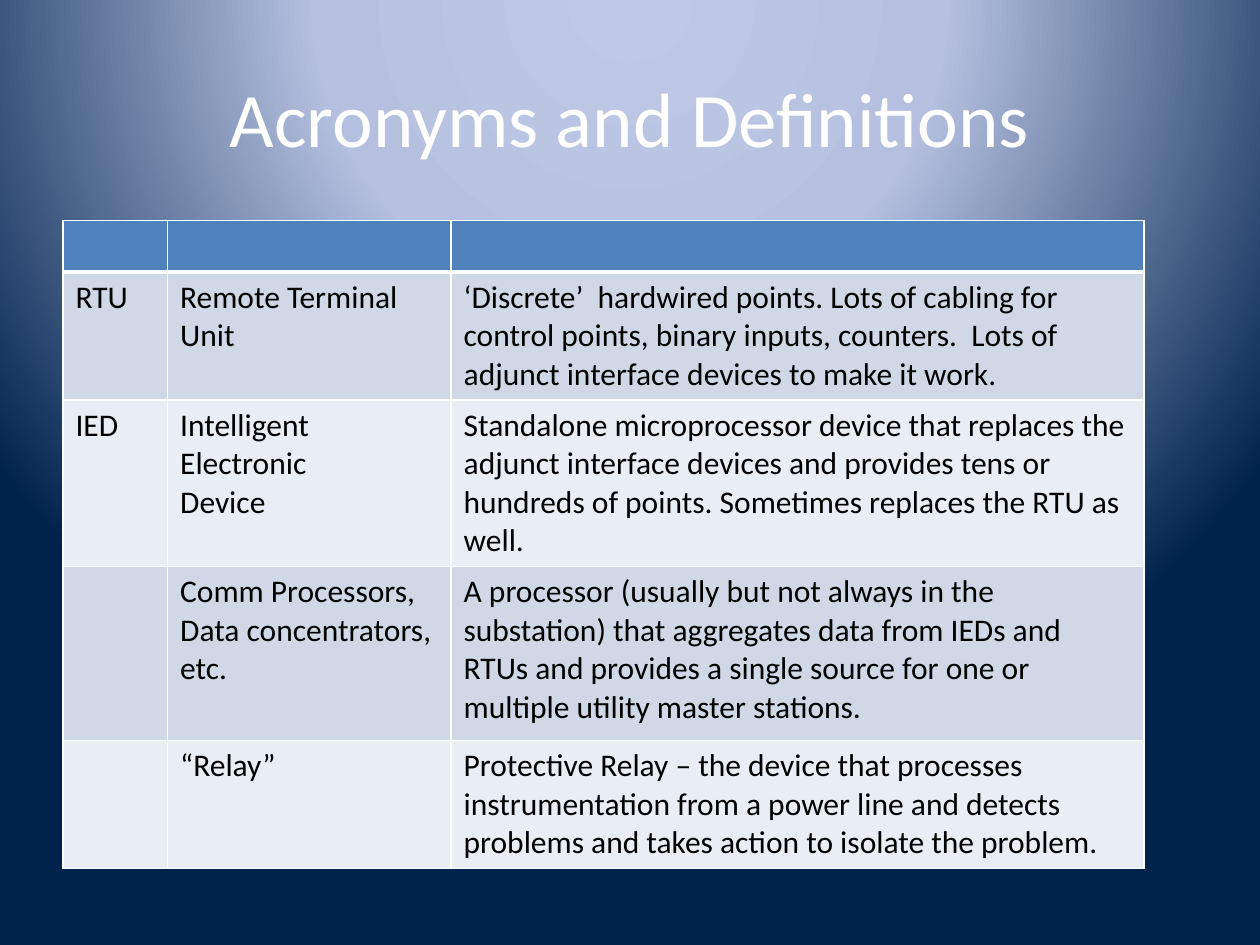
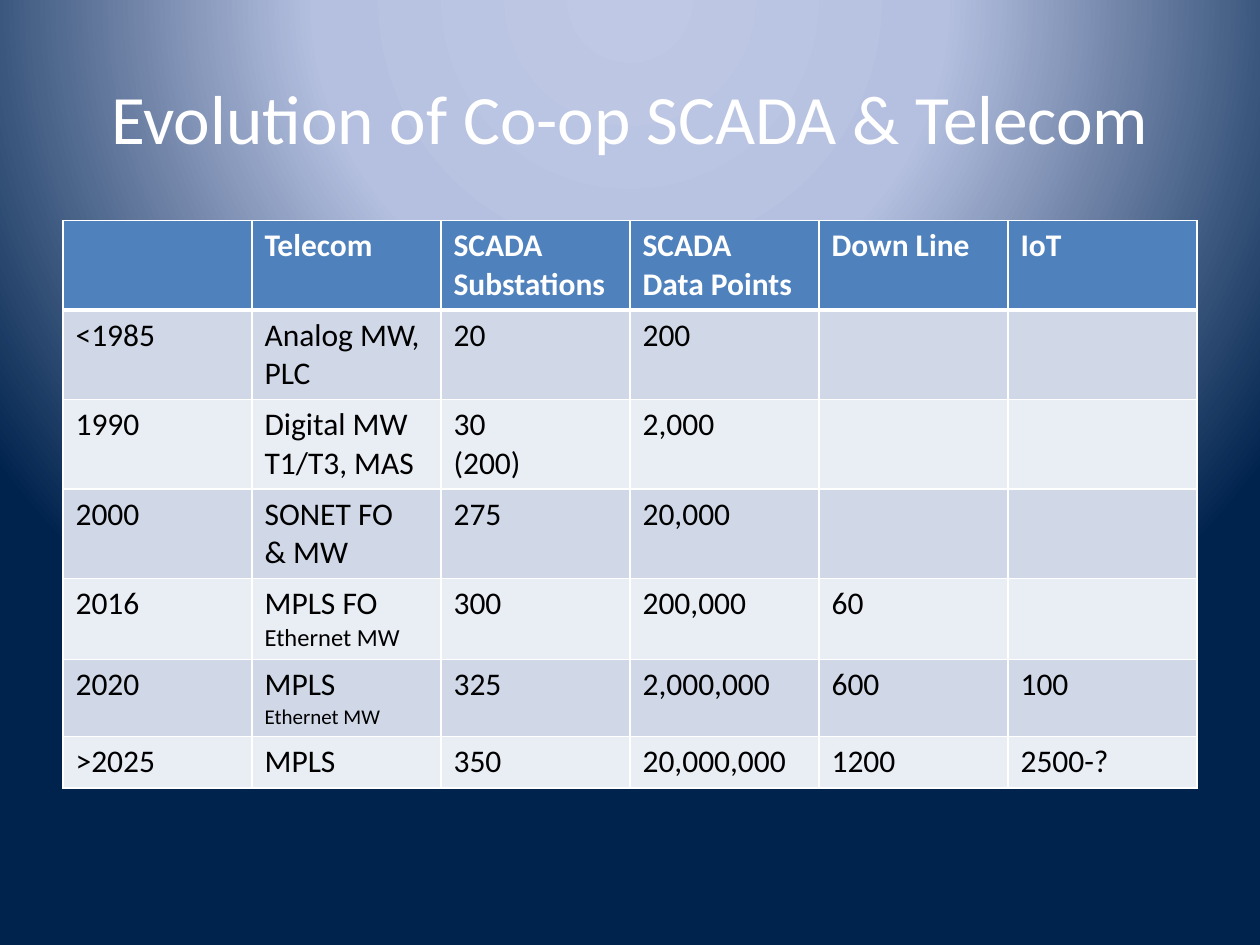
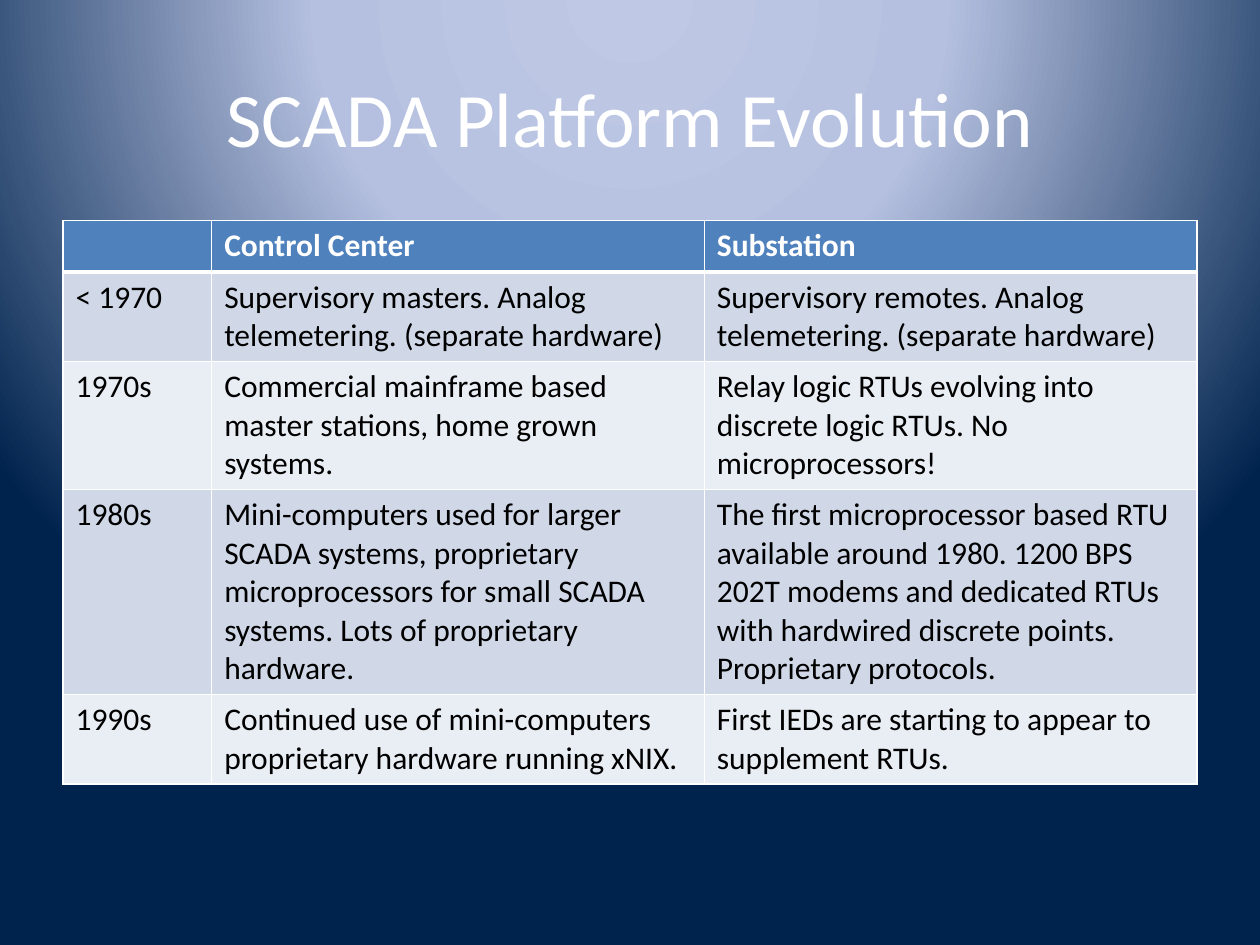
from dataclasses import dataclass

from pptx import Presentation
from pptx.dml.color import RGBColor
from pptx.enum.text import MSO_ANCHOR, PP_ALIGN
from pptx.oxml import parse_xml
from pptx.oxml.ns import nsdecls
from pptx.util import Inches, Pt

CENTER = PP_ALIGN.CENTER
MIDDLE = MSO_ANCHOR.MIDDLE
FONT = "Calibri"
WHITE = "FFFFFF"
BLACK = "000000"
HEADER_FILL = "4F81BD"
BAND_FILLS = ("E9EDF4", "D0D8E8")
BACKDROP_STOPS = ((0, "BFC9E5"), (40, "B5C0E0"), (100, "00234D"))
LEFT = 0.5
TABLE_TOP = 1.75
ROW_HEIGHT = 0.41
BODY_SIZE = 18
THIN, THICK = 1, 3


@dataclass(frozen=True)
class Line:
    text: str
    size: float = BODY_SIZE


Cell = str | tuple[Line, ...]


@dataclass(frozen=True)
class TableSlide:
    title: str
    col_widths: tuple[float, ...]
    rows: tuple[tuple[Cell, ...], ...]
    title_size: float = 44
    tall_rows: tuple[tuple[int, float], ...] = ()


SLIDES = (
    TableSlide(
        "Acronyms and Definitions",
        (0.83, 2.25, 5.5),
        (
            ("", "", ""),
            ("RTU", "Remote Terminal\nUnit",
             "‘Discrete’  hardwired points. Lots of cabling for control points, "
             "binary inputs, counters.  Lots of adjunct interface devices to make it work."),
            ("IED", "Intelligent Electronic\nDevice",
             "Standalone microprocessor device that replaces the adjunct interface devices "
             "and provides tens or hundreds of points. Sometimes replaces the RTU as well."),
            ("", "Comm Processors, Data concentrators, etc.",
             "A processor (usually but not always in the substation) that aggregates data "
             "from IEDs and RTUs and provides a single source for one or multiple utility "
             "master stations."),
            ("", "“Relay”",
             "Protective Relay – the device that processes instrumentation from a power line "
             "and detects problems and takes action to isolate the problem."),
        ),
        tall_rows=((3, 1.38),),
    ),
    TableSlide(
        "Evolution of Co-op SCADA & Telecom",
        (1.5,) * 6,
        (
            ("", "Telecom", "SCADA\nSubstations", "SCADA\nData Points", "Down Line", "IoT"),
            ("<1985", "Analog MW,\nPLC", "20", "200", "", ""),
            ("1990", "Digital MW\nT1/T3, MAS", "30\n(200)", "2,000", "", ""),
            ("2000", "SONET FO\n& MW", "275", "20,000", "", ""),
            ("2016", (Line("MPLS FO"), Line("Ethernet MW", 14)), "300", "200,000", "60", ""),
            ("2020", (Line("MPLS"), Line("Ethernet MW", 12)), "325", "2,000,000", "600", "100"),
            (">2025", "MPLS", "350", "20,000,000", "1200", "2500-?"),
        ),
        title_size=39.6,
    ),
    TableSlide(
        "SCADA Platform Evolution",
        (1.18, 3.91, 3.91),
        (
            ("", "Control Center", "Substation"),
            ("< 1970",
             "Supervisory masters. Analog telemetering. (separate hardware)",
             "Supervisory remotes. Analog telemetering. (separate hardware)"),
            ("1970s",
             "Commercial mainframe based master stations, home grown systems.",
             "Relay logic RTUs evolving into discrete logic RTUs. No microprocessors!"),
            ("1980s",
             "Mini-computers used for larger SCADA systems, proprietary microprocessors for "
             "small SCADA systems. Lots of proprietary hardware.",
             "The first microprocessor based RTU available around 1980. 1200 BPS 202T modems "
             "and dedicated RTUs with hardwired discrete points. Proprietary protocols."),
            ("1990s",
             "Continued use of mini-computers proprietary hardware running xNIX.",
             "First IEDs are starting to appear to supplement RTUs."),
        ),
    ),
)


def rgb(color: str) -> RGBColor:
    return RGBColor.from_string(color)


def set_backdrop(master) -> None:
    master.background.fill.solid()
    bg_pr = master.element.cSld.bg.bgPr
    stops = "".join(
        f'<a:gs pos="{pos * 1000}"><a:srgbClr val="{color}"/></a:gs>'
        for pos, color in BACKDROP_STOPS
    )
    gradient = parse_xml(
        f'<a:gradFill {nsdecls("a")} rotWithShape="1"><a:gsLst>{stops}</a:gsLst>'
        '<a:path path="circle">'
        '<a:fillToRect l="50000" t="-80000" r="50000" b="180000"/>'
        "</a:path></a:gradFill>"
    )
    bg_pr.replace(bg_pr[0], gradient)


def add_run(p, text: str, size: float, color: str, bold: bool = False) -> None:
    r = p.add_run()
    r.text = text
    r.font.name = FONT
    r.font.size = Pt(size)
    r.font.bold = bold
    r.font.color.rgb = rgb(color)


def add_title(s, text: str, size: float) -> None:
    title = s.shapes.title
    title.left, title.top = Inches(LEFT), Inches(0.3)
    title.width, title.height = Inches(9), Inches(1.25)
    tf = title.text_frame
    tf.vertical_anchor = MIDDLE
    p = tf.paragraphs[0]
    p.alignment = CENTER
    add_run(p, text, size, WHITE)


def set_borders(cell, top: float, bottom: float) -> None:
    tc_pr = cell._tc.get_or_add_tcPr()
    for side, width in (("L", THIN), ("R", THIN), ("T", top), ("B", bottom)):
        tc_pr.append(parse_xml(
            f'<a:ln{side} {nsdecls("a")} w="{Pt(width)}"><a:solidFill>'
            f'<a:srgbClr val="{WHITE}"/></a:solidFill></a:ln{side}>'
        ))


def fill_cell(cell, content: Cell, row: int) -> None:
    header = row == 0
    set_borders(cell, THICK if row == 1 else THIN, THICK if header else THIN)
    cell.fill.solid()
    cell.fill.fore_color.rgb = rgb(HEADER_FILL if header else BAND_FILLS[row % 2])
    if not content:
        return
    lines = [Line(t) for t in content.split("\n")] if isinstance(content, str) else content
    tf = cell.text_frame
    for i, line in enumerate(lines):
        p = tf.add_paragraph() if i else tf.paragraphs[0]
        add_run(p, line.text, line.size, WHITE if header else BLACK, header)


def add_grid(s, spec: TableSlide) -> None:
    frame = s.shapes.add_table(
        len(spec.rows), len(spec.col_widths), Inches(LEFT), Inches(TABLE_TOP),
        Inches(sum(spec.col_widths)), Inches(ROW_HEIGHT * len(spec.rows)),
    )
    table = frame.table
    table.horz_banding = False
    for column, width in zip(table.columns, spec.col_widths):
        column.width = Inches(width)
    for row, height in spec.tall_rows:
        table.rows[row].height = Inches(height)
    for row, contents in enumerate(spec.rows):
        for col, content in enumerate(contents):
            fill_cell(table.cell(row, col), content, row)


def main() -> None:
    prs = Presentation()
    prs.slide_width, prs.slide_height = Inches(10), Inches(7.5)
    set_backdrop(prs.slide_master)
    title_only = prs.slide_layouts.get_by_name("Title Only")
    for table_slide in SLIDES:
        s = prs.slides.add_slide(title_only)
        add_title(s, table_slide.title, table_slide.title_size)
        add_grid(s, table_slide)
    prs.save("out.pptx")


if __name__ == "__main__":
    main()
